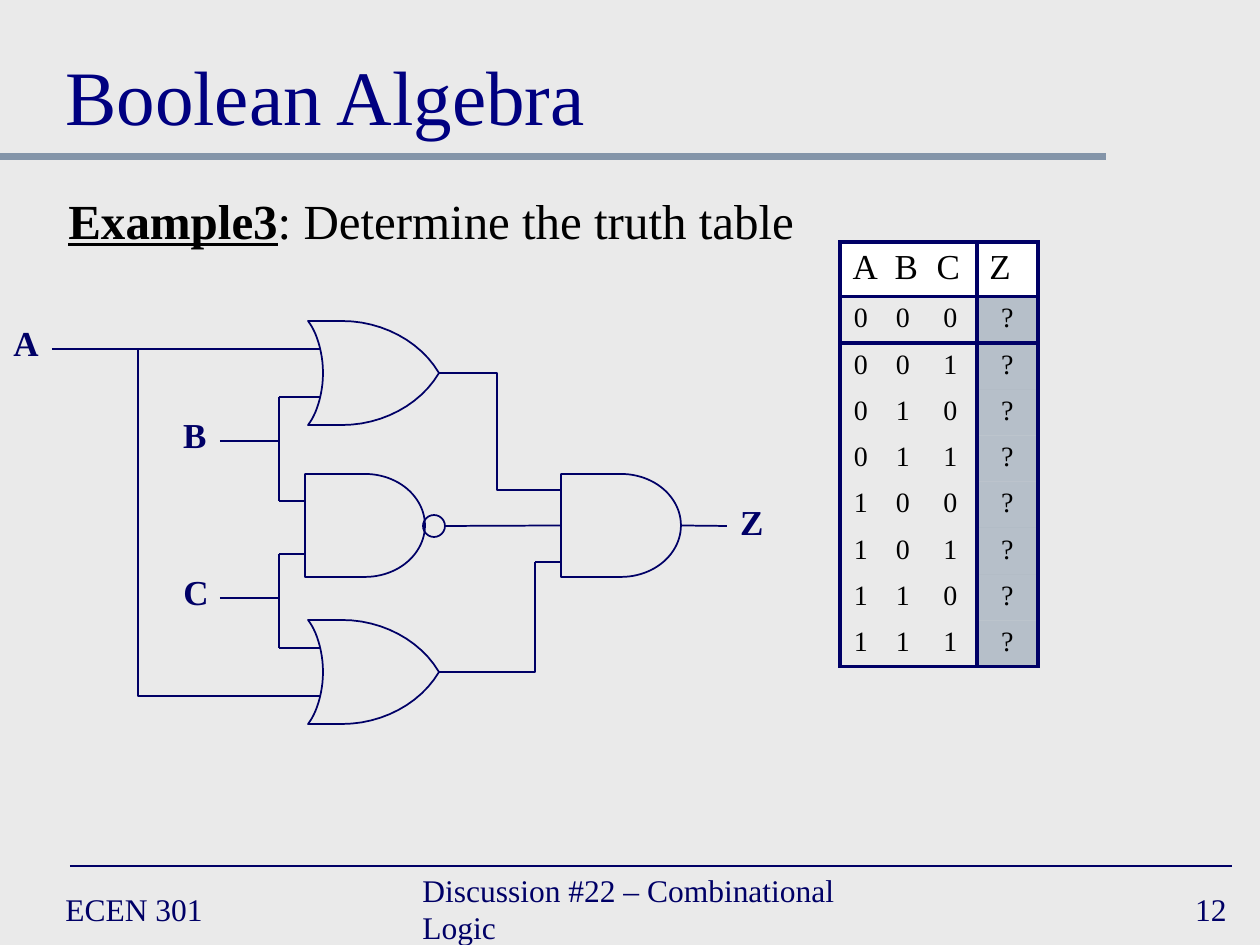
from lxml import etree
from pptx import Presentation
from pptx.dml.color import RGBColor
from pptx.enum.shapes import MSO_CONNECTOR, MSO_SHAPE
from pptx.enum.text import MSO_ANCHOR, PP_ALIGN
from pptx.oxml.ns import qn
from pptx.util import Pt

STRAIGHT, ELBOW = MSO_CONNECTOR.STRAIGHT, MSO_CONNECTOR.ELBOW
DELAY, OVAL = MSO_SHAPE.FLOWCHART_DELAY, MSO_SHAPE.OVAL
LEFT, CENTER, RIGHT = PP_ALIGN.LEFT, PP_ALIGN.CENTER, PP_ALIGN.RIGHT
TOP, MIDDLE, BOTTOM = MSO_ANCHOR.TOP, MSO_ANCHOR.MIDDLE, MSO_ANCHOR.BOTTOM
PX = 914400 / 126
FONT = "Times New Roman"
NO_TABLE_STYLE = "{2D5ABB26-0587-4C30-8999-92F81FD0307C}"
COLORS = {name: RGBColor.from_string(value) for name, value in {
    "background": "EAEAEA", "navy": "000066", "title": "000080",
    "slate": "8495A9", "black": "000000", "white": "FFFFFF"}.items()}

presentation = Presentation()
presentation.slide_width = round(1260 * PX)
presentation.slide_height = round(945 * PX)
slide = presentation.slides.add_slide(presentation.slide_layouts[6])
slide.background.fill.solid()
slide.background.fill.fore_color.rgb = COLORS["background"]


def add_line(start, end, kind=STRAIGHT, color="navy", width=1):
    ends = [round(value * PX) for value in (*start, *end)]
    connector = slide.shapes.add_connector(kind, *ends)
    connector.line.color.rgb = COLORS[color]
    connector.line.width = Pt(width)
    etree.SubElement(connector._element.spPr, qn("a:effectLst"))
    return connector


def add_text(box, text, size, color, align=LEFT, anchor=TOP, wrap=False, bold=None):
    shape = slide.shapes.add_textbox(*(round(value * PX) for value in box))
    frame = shape.text_frame
    frame.word_wrap = wrap
    frame.vertical_anchor = anchor
    paragraph = frame.paragraphs[0]
    paragraph.alignment = align
    paragraph.font.name = FONT
    paragraph.font.size = Pt(size)
    paragraph.font.color.rgb = COLORS[color]
    paragraph.font.bold = bold
    paragraph.add_run().text = text
    return paragraph


# Rules and footer
add_line((0, 157), (1106, 157), color="slate", width=4)
add_line((70, 866), (1232, 866))
for left, width, text, align in [
        (53, 273, "ECEN 301", LEFT),
        (410, 483, "Discussion #22 – Combinational Logic", LEFT),
        (977, 262, "12", RIGHT)]:
    add_text((left, 882, width, 53), text, 18, "navy", align, MIDDLE)

# Title and task
add_text((53, 21, 1155, 126), "Boolean Algebra", 44, "title", anchor=BOTTOM, wrap=True)
task = add_text((56, 184, 1152, 117), "Example3", 28, "black", wrap=True)
task.runs[0].font.bold = True
task.runs[0].font.underline = True
task.add_run().text = ": Determine the truth table"

# Truth table
columns = [42, 42, 53, 61]
rows = ["ABCZ"] + [f"{number:03b}?" for number in range(8)]
heights = [51] + [43] * 8
table = slide.shapes.add_table(
    len(rows), len(columns), *(round(value * PX) for value in
                               (840, 242, sum(columns), sum(heights)))).table
table.first_row = table.horz_banding = False
table._tbl.tblPr.find(qn("a:tableStyleId")).text = NO_TABLE_STYLE
for column, width in zip(table.columns, columns):
    column.width = round(width * PX)
for row_index, row_text in enumerate(rows):
    table.rows[row_index].height = round(heights[row_index] * PX)
    for column_index, text in enumerate(row_text):
        cell = table.cell(row_index, column_index)
        cell.text = text
        paragraph = cell.text_frame.paragraphs[0]
        paragraph.alignment = CENTER if row_index else LEFT
        paragraph.font.name = FONT
        paragraph.font.size = Pt(16 if row_index else 20)
        paragraph.font.color.rgb = COLORS["black"]

        properties = cell._tc.get_or_add_tcPr()
        for side, drawn in [("lnL", column_index in (0, 3)), ("lnR", column_index in (2, 3)),
                            ("lnT", row_index in (0, 1)), ("lnB", row_index in (0, 8))]:
            if drawn:
                border = etree.SubElement(properties, qn(f"a:{side}"), w=str(Pt(2.25)))
                fill = etree.SubElement(border, qn("a:solidFill"))
                etree.SubElement(fill, qn("a:srgbClr"), val=str(COLORS["navy"]))

        if row_index and column_index < 3:
            cell.fill.background()
            continue
        cell.fill.solid()
        cell.fill.fore_color.rgb = COLORS["slate" if row_index else "white"]
        if row_index:
            color = properties.find(qn("a:solidFill")).find(qn("a:srgbClr"))
            etree.SubElement(color, qn("a:alpha"), val="50000")

# OR gates: the upper half is two Bézier curves, the lower half its mirror
STEPS = 12
curves = [[(323, 52), (323, 30), (316, 10), (308, 0)],
          [(342, 0), (382, 0), (420, 20), (439, 52)]]
upper = []
for curve in curves:
    for step in range(STEPS + 1):
        t = step / STEPS
        weights = ((1 - t) ** 3, 3 * t * (1 - t) ** 2, 3 * t * t * (1 - t), t ** 3)
        upper.append(tuple(sum(weight * point[axis] for weight, point in zip(weights, curve))
                           for axis in (0, 1)))
outline = upper + [(x, 104 - y) for x, y in reversed(upper)]
gates = []
for top in (321, 620):
    points = [(round(x * PX), round((top + y) * PX)) for x, y in outline]
    builder = slide.shapes.build_freeform(*points[0], scale=1.0)
    builder.add_line_segments(points[1:], close=True)
    gates.append(builder.convert_to_shape())
    for lead in (28, 76):
        add_line((279, top + lead), (320, top + lead))
    add_line((439, top + 52), (459, top + 52))

# NAND gate with its bubble, and AND gate
for kind, left, top, width, height in [
        (DELAY, 305, 474, 120, 103), (OVAL, 423, 515, 22, 22), (DELAY, 561, 474, 120, 103)]:
    gates.append(slide.shapes.add_shape(
        kind, *(round(value * PX) for value in (left, top, width, height))))
for gate in gates:
    gate.shadow.inherit = False
    gate.fill.background()
    gate.line.color.rgb = COLORS["navy"]
    gate.line.width = Pt(1)
and_gate = gates[-1]

# Straight wires
for start, end in [
        ((52, 349), (279, 349)),                             # A
        ((220, 441), (279, 441)), ((279, 397), (279, 501)),  # B
        ((279, 501), (305, 501)),
        ((220, 598), (279, 598)), ((279, 554), (279, 648)),  # C
        ((279, 554), (305, 554)),
        ((535, 490), (561, 490)), ((535, 562), (561, 562))]:  # AND inputs
    add_line(start, end)
middle_wire = add_line((445, 526), (561, 526))
middle_wire.end_connect(and_gate, 1)
output_wire = add_line((681, 526), (727, 526))
output_wire.begin_connect(and_gate, 3)

# Bent wires, with the share of the width at which each one turns
for start, end, turn in [((459, 373), (535, 490), 50),
                         ((459, 672), (535, 562), 100),
                         ((279, 696), (138, 349), 100)]:
    wire = add_line(start, end, ELBOW)
    guides = wire._element.spPr.find(qn("a:prstGeom")).get_or_add_avLst()
    etree.SubElement(guides, qn("a:gd"), name="adj1", fmla=f"val {turn * 1000}")

# Signal names
for text, left, top in [("A", 1, 315), ("B", 170, 407), ("C", 171, 564), ("Z", 727, 494)]:
    add_text((left, top, 50, 54), text, 20, "navy", CENTER, bold=True)

presentation.save("out.pptx")
